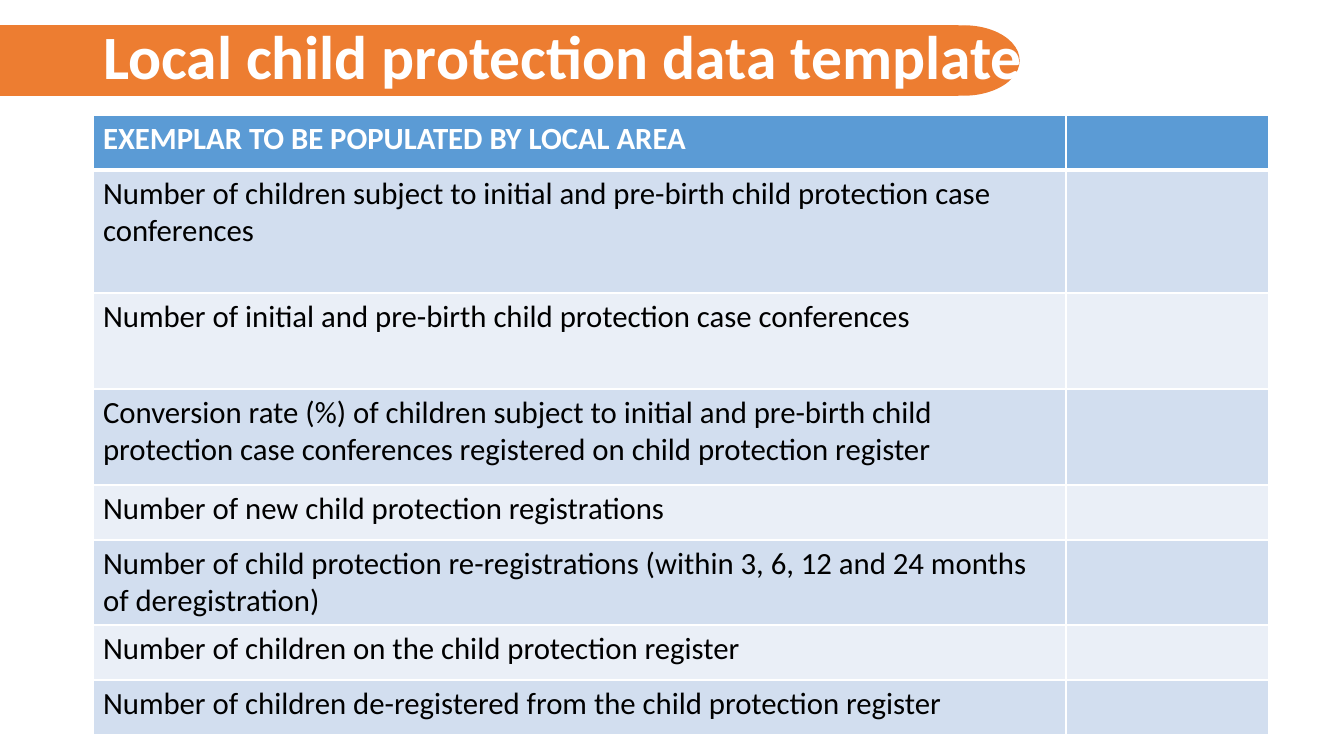
"""Build the local child protection data template slide."""
import dataclasses

import lxml.etree
import pptx
import pptx.dml.color
import pptx.enum.shapes
import pptx.enum.text
import pptx.oxml.ns
import pptx.util

EMU_PER_PX = 12192000 / 1344
FONT = "Calibri"
ORANGE, BLUE, WHITE, BLACK = "ED7D31", "5B9BD5", "FFFFFF", "000000"
BANDS = ("D2DEEF", "EAEFF7")
SHAPES = pptx.enum.shapes.MSO_SHAPE


@dataclasses.dataclass
class BannerPart:
    kind: SHAPES
    left: int
    width: int


@dataclasses.dataclass
class Row:
    label: str
    height: int


BANNER_TOP, BANNER_HEIGHT = 26, 69
BANNER = [
    BannerPart(SHAPES.RECTANGLE, 0, 958),
    BannerPart(SHAPES.OVAL, 909, 110),
]
COLUMNS = (973, 203)
ROWS = [
    Row("EXEMPLAR TO BE POPULATED BY LOCAL AREA", 55),
    Row("Number of children subject to initial and pre-birth child protection "
        "case conferences", 123),
    Row("Number of initial and pre-birth child protection case conferences", 96),
    Row("Conversion rate (%) of children subject to initial and pre-birth child "
        "protection case conferences registered on child protection register", 96),
    Row("Number of new child protection registrations", 55),
    Row("Number of child protection re-registrations (within 3, 6, 12 and 24 "
        "months of deregistration)", 85),
    Row("Number of children on the child protection register", 55),
    Row("Number of children de-registered from the child protection register", 55),
]


def px(n: int) -> pptx.util.Emu:
    return pptx.util.Emu(round(n * EMU_PER_PX))


def rgb(color: str) -> pptx.dml.color.RGBColor:
    return pptx.dml.color.RGBColor.from_string(color)


def fill(item, color: str) -> None:
    item.fill.solid()
    item.fill.fore_color.rgb = rgb(color)


def write(tf, text: str, *, size: int, color: str, bold: bool = False,
          spacing: float = 1.0) -> None:
    p = tf.paragraphs[0]
    p.alignment = pptx.enum.text.PP_ALIGN.LEFT
    p.line_spacing = spacing
    r = p.add_run()
    r.text = text
    r.font.name = FONT
    r.font.size = pptx.util.Pt(size)
    r.font.bold = bold
    r.font.color.rgb = rgb(color)


def set_borders(cell, widths: dict[str, int]) -> None:
    tc_pr = cell._tc.get_or_add_tcPr()
    qn = pptx.oxml.ns.qn
    for i, (side, width) in enumerate(widths.items()):
        ln = lxml.etree.Element(qn(f"a:ln{side}"), w=str(pptx.util.Pt(width)))
        solid = lxml.etree.SubElement(ln, qn("a:solidFill"))
        lxml.etree.SubElement(solid, qn("a:srgbClr"), val=WHITE)
        tc_pr.insert(i, ln)


def add_banner(slide) -> None:
    group = slide.shapes.add_group_shape()
    for part in BANNER:
        sp = group.shapes.add_shape(part.kind, px(part.left), px(BANNER_TOP),
                                    px(part.width), px(BANNER_HEIGHT))
        sp.shadow.inherit = False
        fill(sp, ORANGE)
        sp.line.color.rgb = rgb(ORANGE)
        sp.line.width = pptx.util.Pt(1)


def add_title(slide, text: str) -> None:
    sp = slide.shapes.title
    sp.left, sp.top, sp.width, sp.height = px(93), px(17), px(1159), px(86)
    tf = sp.text_frame
    tf.auto_size = pptx.enum.text.MSO_AUTO_SIZE.NONE
    tf.vertical_anchor = pptx.enum.text.MSO_ANCHOR.MIDDLE
    tf.word_wrap = True
    write(tf, text, size=44, color=WHITE, bold=True, spacing=0.9)
    slide.shapes.element.append(sp.element)


def add_data_table(slide) -> None:
    height = sum(row.height for row in ROWS)
    table = slide.shapes.add_table(len(ROWS), len(COLUMNS), px(93), px(115),
                                   px(sum(COLUMNS)), px(height)).table
    for column, width in zip(table.columns, COLUMNS):
        column.width = px(width)
    for i, row in enumerate(ROWS):
        header = i == 0
        table.rows[i].height = px(row.height)
        for cell in table.rows[i].cells:
            fill(cell, BLUE if header else BANDS[(i - 1) % 2])
            set_borders(cell, {"L": 1, "R": 1, "T": 3 if i == 1 else 1,
                               "B": 3 if header else 1})
        write(table.cell(i, 0).text_frame, row.label, size=22,
              color=WHITE if header else BLACK, bold=header)


def main() -> None:
    prs = pptx.Presentation()
    prs.slide_width, prs.slide_height = px(1344), px(756)
    slide = prs.slides.add_slide(prs.slide_layouts.get_by_name("Title Only"))
    add_banner(slide)
    add_title(slide, "Local child protection data template")
    add_data_table(slide)
    prs.save("out.pptx")


if __name__ == "__main__":
    main()
